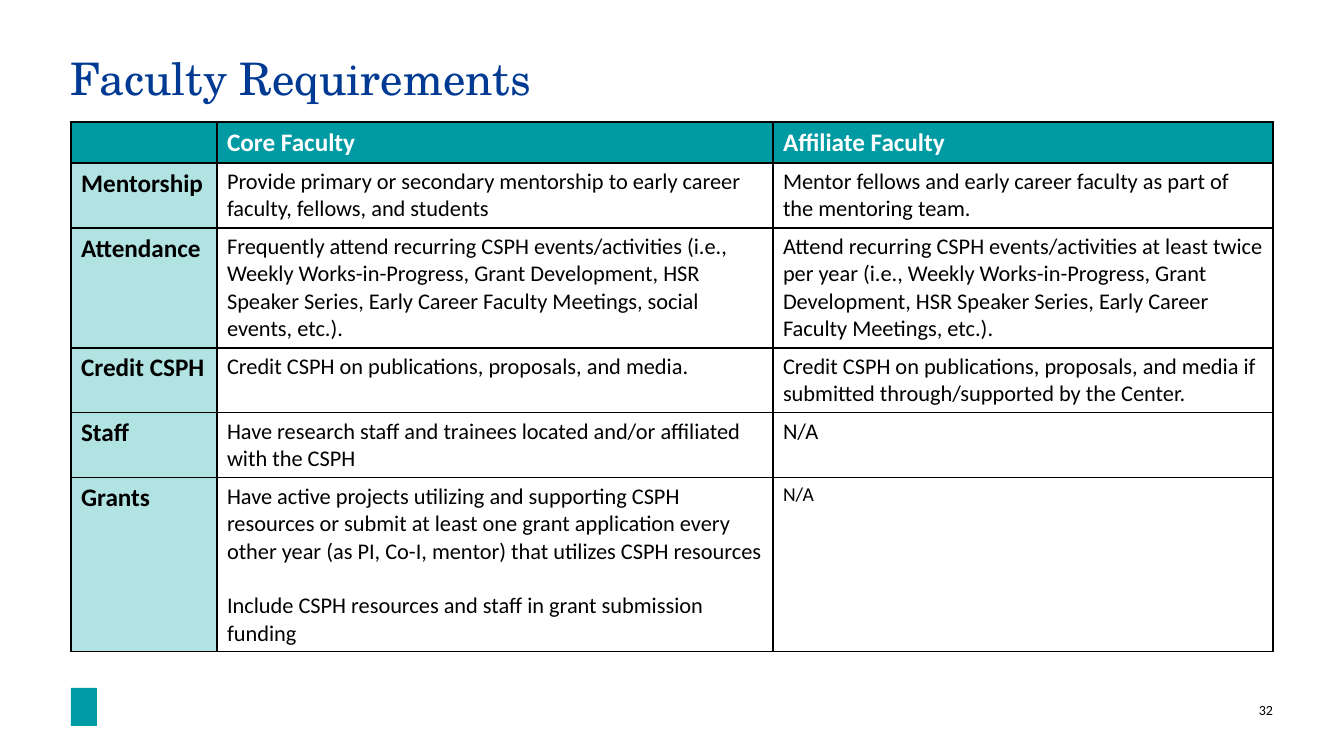
from dataclasses import dataclass

from lxml import etree
from pptx import Presentation
from pptx.dml.color import RGBColor
from pptx.enum.shapes import MSO_SHAPE
from pptx.enum.text import MSO_ANCHOR, MSO_AUTO_SIZE, PP_ALIGN
from pptx.oxml.ns import qn
from pptx.util import Pt

LEFT, RIGHT = PP_ALIGN.LEFT, PP_ALIGN.RIGHT
TOP = MSO_ANCHOR.TOP
NO_FIT = MSO_AUTO_SIZE.NONE
RECTANGLE = MSO_SHAPE.RECTANGLE
TITLE_ONLY = 5
EMU_PER_PX = 914400 / 100.8


@dataclass(frozen=True)
class Theme:
    title_font: str = "TeX Gyre Schola"
    body_font: str = "Calibri"
    navy: str = "003A93"
    header: str = "009AA3"
    label: str = "B0E3E2"
    mark: str = "009CA6"
    black: str = "000000"
    white: str = "FFFFFF"
    title_size: int = 32
    heading_size: int = 18
    body_size: int = 16
    small_size: int = 14
    number_size: int = 10
    paragraph_gap: float = 19.5


THEME = Theme()
COLUMN_WIDTHS = [146, 556, 500]
ROW_HEIGHTS = [41, 65, 120, 65, 65, 174]
REQUIREMENTS = [
    ("", "Core Faculty", "Affiliate Faculty"),
    ("Mentorship",
     "Provide primary or secondary mentorship to early career faculty, fellows, and students",
     "Mentor fellows and early career faculty as part of the mentoring team."),
    ("Attendance",
     "Frequently attend recurring CSPH events/activities (i.e., Weekly Works-in-Progress, "
     "Grant Development, HSR Speaker Series, Early Career Faculty Meetings, social events, etc.).",
     "Attend recurring CSPH events/activities at least twice per year (i.e., Weekly "
     "Works-in-Progress, Grant Development, HSR Speaker Series, Early Career Faculty "
     "Meetings, etc.)."),
    ("Credit CSPH",
     "Credit CSPH on publications, proposals, and media.",
     "Credit CSPH on publications, proposals, and media if submitted through/supported "
     "by the Center."),
    ("Staff",
     "Have research staff and trainees located and/or affiliated with the CSPH",
     "N/A"),
    ("Grants",
     "Have active projects utilizing and supporting CSPH resources or submit at least one "
     "grant application every other year (as PI, Co-I, mentor) that utilizes CSPH resources\n"
     "Include CSPH resources and staff in grant submission funding",
     "N/A"),
]


def px(length):
    return round(length * EMU_PER_PX)


def place(box):
    return [px(length) for length in box]


def style(font, name, size, color, bold=False):
    font.name, font.size, font.bold = name, Pt(size), bold
    font.color.rgb = RGBColor.from_string(color)


def clear_margins(frame):
    frame.margin_left = frame.margin_right = frame.margin_top = frame.margin_bottom = 0


def add_title(page, box, text):
    title = page.shapes.title
    title.left, title.top, title.width, title.height = place(box)
    frame = title.text_frame
    frame.text = text
    frame.auto_size, frame.vertical_anchor = NO_FIT, TOP
    clear_margins(frame)
    para = frame.paragraphs[0]
    para.alignment, para.line_spacing = LEFT, 0.9
    style(para.runs[0].font, THEME.title_font, THEME.title_size, THEME.navy)


def add_borders(cell):
    properties = cell._tc.get_or_add_tcPr()
    for index, side in enumerate(("a:lnL", "a:lnR", "a:lnT", "a:lnB")):
        line = etree.Element(qn(side), w=str(Pt(1)))
        fill = etree.SubElement(line, qn("a:solidFill"))
        etree.SubElement(fill, qn("a:srgbClr"), val=THEME.black)
        properties.insert(index, line)


def fill_cell(cell, text, size, color, bold, background):
    if background:
        cell.fill.solid()
        cell.fill.fore_color.rgb = RGBColor.from_string(background)
    else:
        cell.fill.background()
    add_borders(cell)
    cell.text_frame.text = text
    for index, para in enumerate(cell.text_frame.paragraphs):
        if index:
            para.space_before = Pt(THEME.paragraph_gap)
        style(para.font, THEME.body_font, size, color, bold)
        for span in para.runs:
            style(span.font, THEME.body_font, size, color, bold)


def add_requirements(page, box):
    table = page.shapes.add_table(len(ROW_HEIGHTS), len(COLUMN_WIDTHS), *place(box)).table
    table.first_row = table.horz_banding = False
    for column, width in zip(table.columns, COLUMN_WIDTHS):
        column.width = px(width)
    for row, height in zip(table.rows, ROW_HEIGHTS):
        row.height = px(height)
    last_cell = (len(ROW_HEIGHTS) - 1, len(COLUMN_WIDTHS) - 1)
    for r, texts in enumerate(REQUIREMENTS):
        for c, text in enumerate(texts):
            if r == 0:
                look = (THEME.heading_size, THEME.white, True, THEME.header)
            elif c == 0:
                look = (THEME.heading_size, THEME.black, True, THEME.label)
            else:
                size = THEME.small_size if (r, c) == last_cell else THEME.body_size
                look = (size, THEME.black, False, None)
            fill_cell(table.cell(r, c), text, *look)


def add_footer(page, box, number):
    left, top, width, height = box
    # Plain mark at the left edge
    mark = page.shapes.add_shape(RECTANGLE, *place((left, top, 26, height)))
    mark.shadow.inherit = False
    mark.fill.solid()
    mark.fill.fore_color.rgb = RGBColor.from_string(THEME.mark)
    mark.line.fill.background()
    # Page number at the right edge
    number_box = page.shapes.add_textbox(*place((left + width - 38, top + 14, 38, 17)))
    frame = number_box.text_frame
    frame.word_wrap = True
    clear_margins(frame)
    frame.text = number
    para = frame.paragraphs[0]
    para.alignment = RIGHT
    style(para.runs[0].font, THEME.body_font, THEME.number_size, THEME.black)


def main():
    deck = Presentation()
    deck.slide_width, deck.slide_height = px(1344), px(756)
    page = deck.slides.add_slide(deck.slide_layouts[TITLE_ONLY])
    left, width = 71, sum(COLUMN_WIDTHS)
    add_footer(page, (left, 688, width, 38), "32")
    add_title(page, (left, 57, width, 106), "Faculty Requirements")
    add_requirements(page, (left, 122, width, sum(ROW_HEIGHTS)))
    deck.save("out.pptx")


if __name__ == "__main__":
    main()
